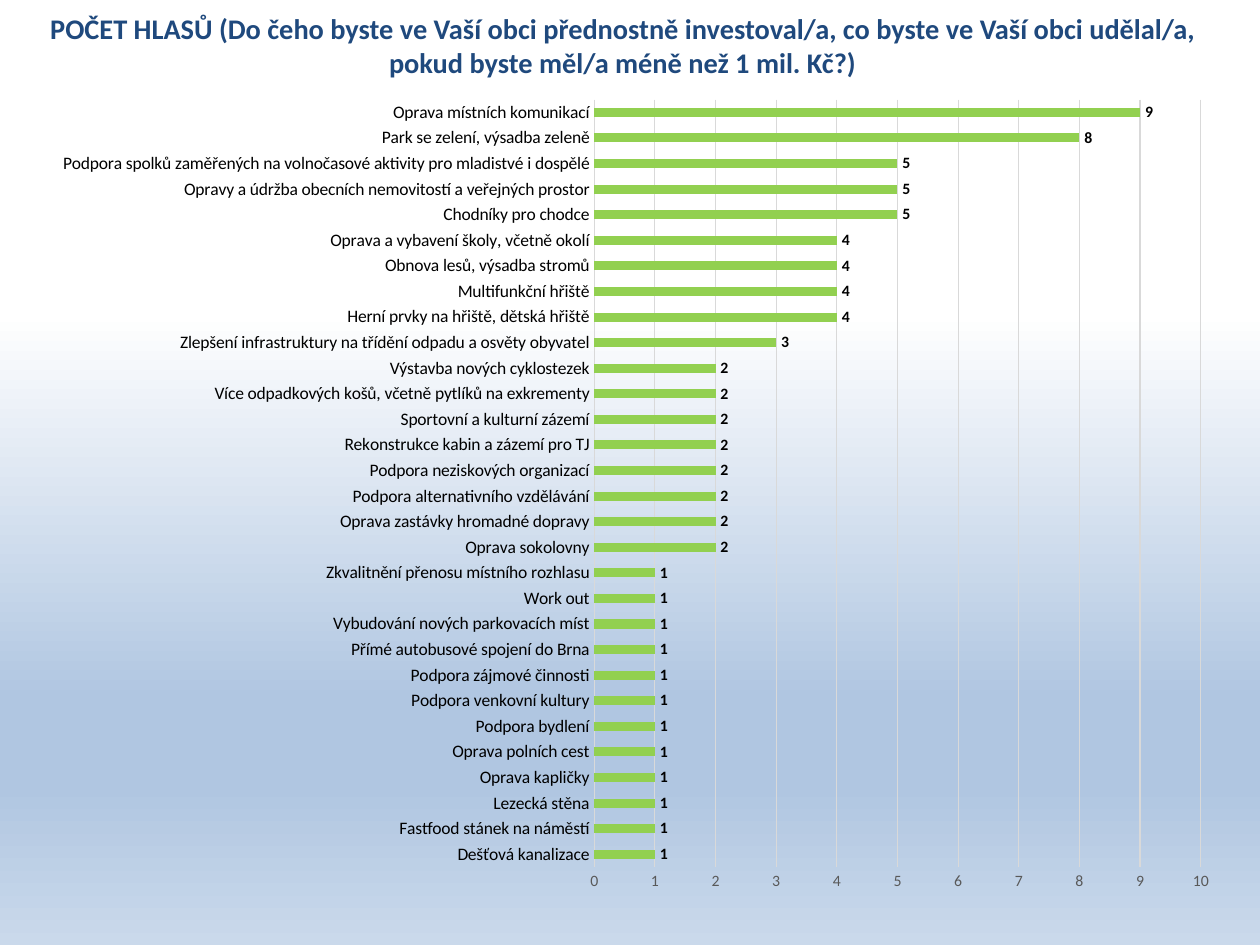
from lxml.etree import SubElement
from pptx import Presentation
from pptx.chart.data import CategoryChartData
from pptx.dml.color import RGBColor
from pptx.enum.chart import XL_CHART_TYPE, XL_LABEL_POSITION, XL_TICK_MARK
from pptx.enum.text import MSO_ANCHOR, MSO_AUTO_SIZE, PP_ALIGN
from pptx.oxml import parse_xml
from pptx.oxml.ns import nsdecls, qn
from pptx.util import Inches, Pt

NAVY = RGBColor(0x1F, 0x49, 0x7D)
BLACK = RGBColor(0, 0, 0)
GRAY = RGBColor(0x59, 0x59, 0x59)
LIGHT_GRAY = RGBColor(0xD9, 0xD9, 0xD9)
GREEN = RGBColor(0x92, 0xD0, 0x50)
WHITE = RGBColor(0xFF, 0xFF, 0xFF)
BLUE = RGBColor(0xB0, 0xC6, 0xE1)
PALE_BLUE = RGBColor(0xCA, 0xD9, 0xEB)

QUESTION = (
    "POČET HLASŮ (Do čeho byste ve Vaší obci přednostně investoval/a, "
    "co byste ve Vaší obci udělal/a, pokud byste měl/a méně než 1 mil. Kč?)"
)
PROPOSALS_BY_VOTES = {
    1: [
        "Dešťová kanalizace",
        "Fastfood stánek na náměstí",
        "Lezecká stěna",
        "Oprava kapličky",
        "Oprava polních cest",
        "Podpora bydlení",
        "Podpora venkovní kultury",
        "Podpora zájmové činnosti",
        "Přímé autobusové spojení do Brna",
        "Vybudování nových parkovacích míst",
        "Work out",
        "Zkvalitnění přenosu místního rozhlasu",
    ],
    2: [
        "Oprava sokolovny",
        "Oprava zastávky hromadné dopravy",
        "Podpora alternativního vzdělávání",
        "Podpora neziskových organizací",
        "Rekonstrukce kabin a zázemí pro TJ",
        "Sportovní a kulturní zázemí",
        "Více odpadkových košů, včetně pytlíků na exkrementy",
        "Výstavba nových cyklostezek",
    ],
    3: ["Zlepšení infrastruktury na třídění odpadu a osvěty obyvatel"],
    4: [
        "Herní prvky na hřiště, dětská hřiště",
        "Multifunkční hřiště",
        "Obnova lesů, výsadba stromů",
        "Oprava a vybavení školy, včetně okolí",
    ],
    5: [
        "Chodníky pro chodce",
        "Opravy a údržba obecních nemovitostí a veřejných prostor",
        "Podpora spolků zaměřených na volnočasové aktivity pro mladistvé i dospělé",
    ],
    8: ["Park se zelení, výsadba zeleně"],
    9: ["Oprava místních komunikací"],
}
BACKGROUND_STOPS = [(33, WHITE), (74, BLUE), (83, BLUE), (100, PALE_BLUE)]
PLOT_SHARES = {"x": 0.47, "y": 0.02, "w": 0.51, "h": 0.93}
TITLE_FONT = {"name": "Calibri", "size": Pt(16.2), "bold": True}
CATEGORY_FONT = {"name": "Calibri", "size": Pt(10), "bold": False}
SCALE_FONT = {"name": "Calibri", "size": Pt(9), "bold": False}
VOTES_FONT = {"name": "Calibri", "size": Pt(9), "bold": True}


def apply(target, values):
    for attribute, value in values.items():
        setattr(target, attribute, value)


def style_font(font, values, color):
    apply(font, values)
    font.color.rgb = color


def paint_background(slide):
    fill = slide.background.fill
    fill.gradient()
    fill.gradient_angle = 270
    stop_list = slide.background._cSld.find(".//" + qn("a:gsLst"))
    stop_list.clear()
    for percent, color in BACKGROUND_STOPS:
        stop = SubElement(stop_list, qn("a:gs"), pos=str(percent * 1000))
        SubElement(stop, qn("a:srgbClr"), val=str(color))


def add_title(slide):
    title = slide.shapes.title
    apply(title, {"left": Inches(0.25), "top": Inches(0.13),
                  "width": Inches(9.38), "height": Inches(0.46)})
    frame = title.text_frame
    frame.text = QUESTION
    apply(frame, {"word_wrap": True, "auto_size": MSO_AUTO_SIZE.NONE,
                  "vertical_anchor": MSO_ANCHOR.MIDDLE})
    paragraph = frame.paragraphs[0]
    paragraph.alignment = PP_ALIGN.CENTER
    style_font(paragraph.runs[0].font, TITLE_FONT, NAVY)


def set_plot_area(chart):
    plot_area = chart._chartSpace.chart.plotArea
    for layout in plot_area.findall(qn("c:layout")):
        plot_area.remove(layout)
    modes = '<c:xMode val="edge"/><c:yMode val="edge"/>'
    shares = "".join(f'<c:{side} val="{share}"/>' for side, share in PLOT_SHARES.items())
    plot_area.insert(0, parse_xml(
        f'<c:layout {nsdecls("c")}><c:manualLayout><c:layoutTarget val="inner"/>'
        f"{modes}{shares}</c:manualLayout></c:layout>"))


def add_votes_chart(slide):
    data = CategoryChartData(number_format="General")
    data.categories = [name for names in PROPOSALS_BY_VOTES.values() for name in names]
    data.add_series("Počet hlasů", [
        votes for votes, names in PROPOSALS_BY_VOTES.items() for _ in names])
    chart = slide.shapes.add_chart(
        XL_CHART_TYPE.BAR_CLUSTERED, Inches(0.28), Inches(0.66),
        Inches(9.44), Inches(6.55), data).chart
    apply(chart, {"has_legend": False, "has_title": False})
    style_font(chart.font, CATEGORY_FONT, BLACK)

    no_ticks = {"major_tick_mark": XL_TICK_MARK.NONE, "minor_tick_mark": XL_TICK_MARK.NONE}
    proposals, scale = chart.category_axis, chart.value_axis
    apply(proposals, no_ticks | {"has_major_gridlines": False})
    apply(scale, no_ticks | {"has_major_gridlines": True, "minimum_scale": 0,
                             "maximum_scale": 10, "major_unit": 1})
    style_font(proposals.tick_labels.font, CATEGORY_FONT, BLACK)
    style_font(scale.tick_labels.font, SCALE_FONT, GRAY)
    for line in (proposals.format.line, scale.major_gridlines.format.line):
        line.width = Pt(0.75)
        line.color.rgb = LIGHT_GRAY
    scale.format.line.fill.background()

    bars = chart.plots[0]
    apply(bars, {"gap_width": 182, "vary_by_categories": False, "has_data_labels": True})
    bar_fill = bars.series[0].format.fill
    bar_fill.solid()
    bar_fill.fore_color.rgb = GREEN
    apply(bars.data_labels, {"show_value": True, "position": XL_LABEL_POSITION.OUTSIDE_END})
    style_font(bars.data_labels.font, VOTES_FONT, BLACK)
    set_plot_area(chart)


def main():
    deck = Presentation()
    apply(deck, {"slide_width": Inches(10), "slide_height": Inches(7.5)})
    slide = deck.slides.add_slide(deck.slide_layouts[5])
    paint_background(slide)
    add_title(slide)
    add_votes_chart(slide)
    deck.save("out.pptx")


if __name__ == "__main__":
    main()
